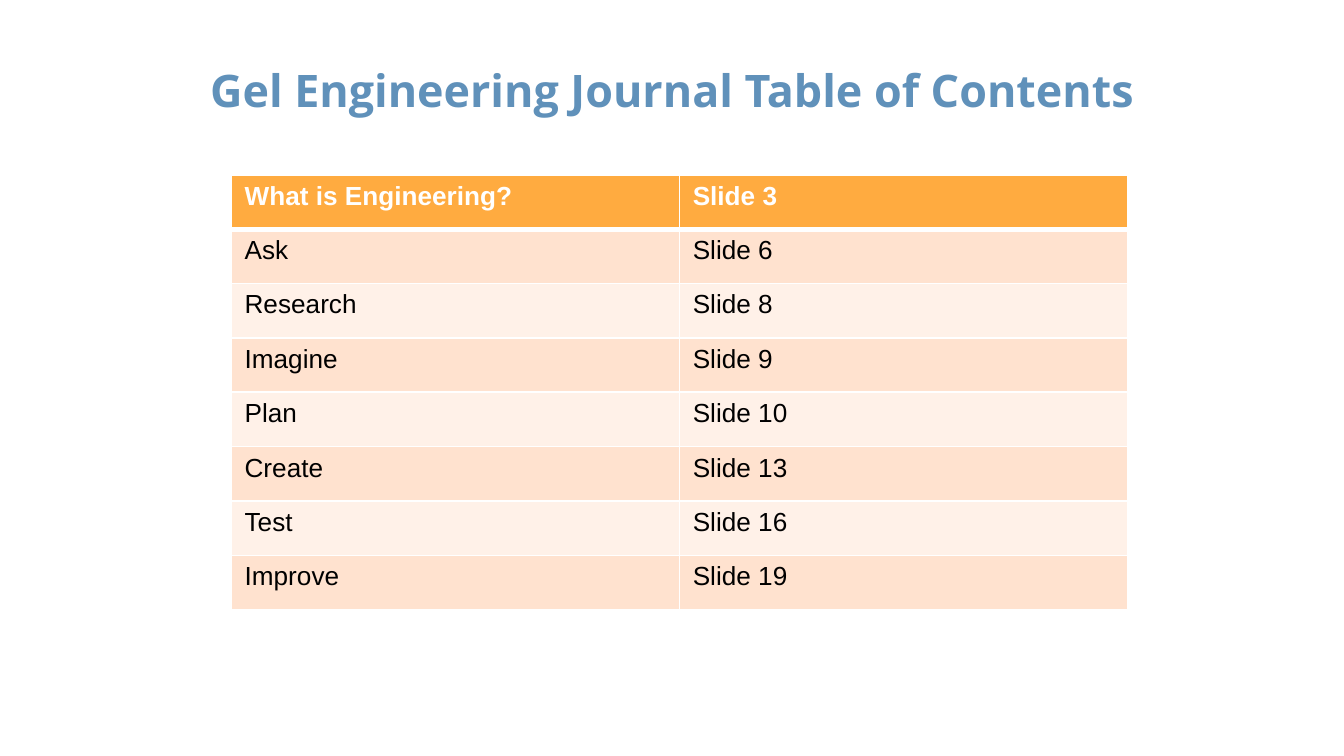
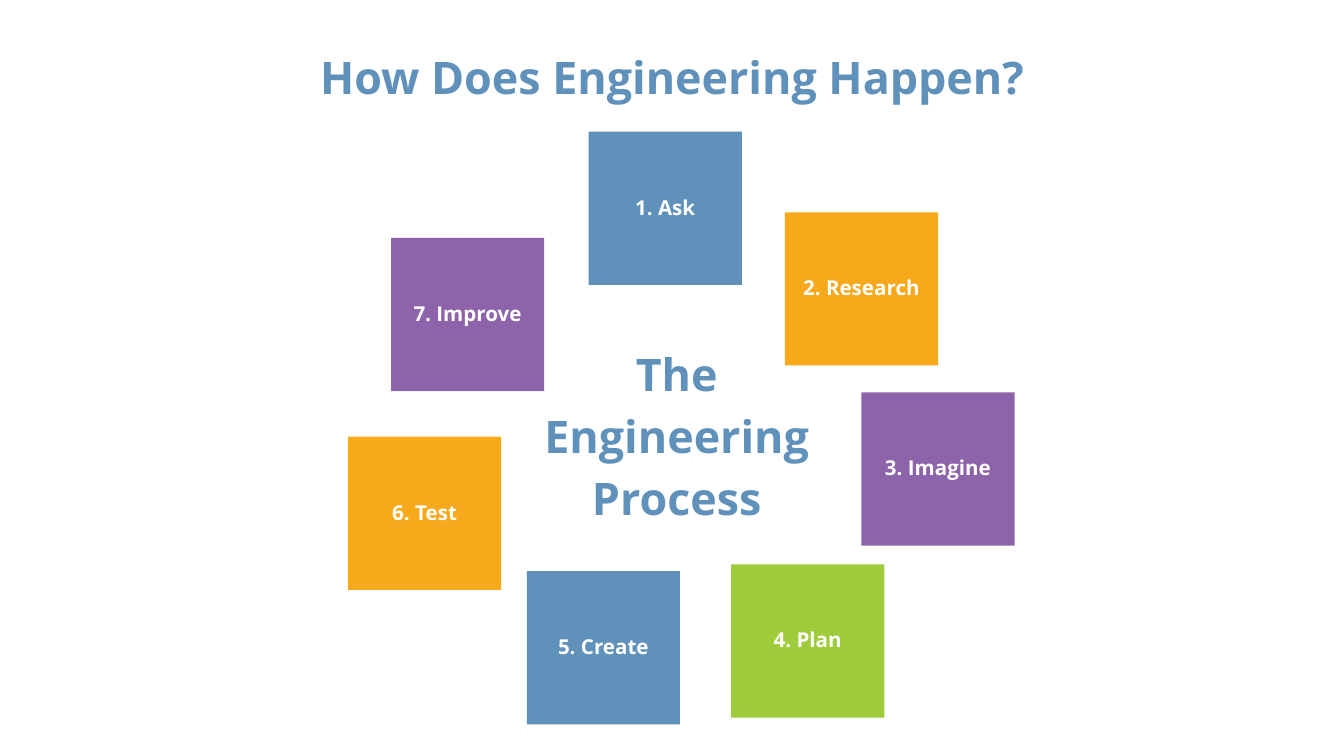
import pptx
import pptx.dml.color
import pptx.enum.shapes
import pptx.enum.text
import pptx.oxml
import pptx.oxml.ns
import pptx.util

Inches = pptx.util.Inches
Pt = pptx.util.Pt
RGBColor = pptx.dml.color.RGBColor

# Shared colours and fonts
BLUE = RGBColor(0x60, 0x91, 0xBA)
ORANGE = RGBColor(0xF8, 0xA8, 0x1B)
PURPLE = RGBColor(0x8D, 0x64, 0xAA)
GREEN = RGBColor(0x9F, 0xCC, 0x3B)
WHITE = RGBColor(0xFF, 0xFF, 0xFF)
BLACK = RGBColor(0x00, 0x00, 0x00)
HEADER_FILL = RGBColor(0xFF, 0xAB, 0x40)
BAND_FILLS = (RGBColor(0xFF, 0xF1, 0xE8), RGBColor(0xFF, 0xE2, 0xCF))
HEADING_FONT = "Open Sans"
TABLE_FONT = "Arial"

CONTENTS = [
    ("What is Engineering?", "Slide 3"),
    ("Ask", "Slide 6"),
    ("Research", "Slide 8"),
    ("Imagine", "Slide 9"),
    ("Plan", "Slide 10"),
    ("Create", "Slide 13"),
    ("Test", "Slide 16"),
    ("Improve", "Slide 19"),
]

# Step name, left, top, colour
STEPS = [
    ("Ask", 4.38, 0.98, BLUE),
    ("Research", 5.84, 1.58, ORANGE),
    ("Imagine", 6.41, 2.92, PURPLE),
    ("Plan", 5.44, 4.2, GREEN),
    ("Create", 3.92, 4.25, BLUE),
    ("Test", 2.59, 3.25, ORANGE),
    ("Improve", 2.91, 1.77, PURPLE),
]
STEP_SIZE = 1.14
LABEL_DROP = 0.34
LABEL_HEIGHT = 0.39


def add_run(p, text, font, size, color, bold):
    r = p.add_run()
    r.text = text
    r.font.name = font
    r.font.size = Pt(size)
    r.font.color.rgb = color
    r.font.bold = bold


def write_heading(sp, text, size, color):
    """Centred bold text, starting at the top of its frame."""
    tf = sp.text_frame
    tf.word_wrap = True
    tf.auto_size = pptx.enum.text.MSO_AUTO_SIZE.NONE
    tf.vertical_anchor = pptx.enum.text.MSO_ANCHOR.TOP
    tf.margin_left = tf.margin_right = Inches(0.1)
    tf.margin_top = tf.margin_bottom = Inches(0.1)
    p = tf.paragraphs[0]
    p.alignment = pptx.enum.text.PP_ALIGN.CENTER
    p.line_spacing = 1.15
    add_run(p, text, HEADING_FONT, size, color, True)


def add_titled_slide(prs, title, top, height):
    s = prs.slides.add_slide(prs.slide_layouts[5])
    sp = s.shapes.title
    sp.left, sp.top = Inches(0.34), Inches(top)
    sp.width, sp.height = Inches(9.32), Inches(height)
    write_heading(sp, title, 24, BLUE)
    return s


def add_label(s, text, left, top, width, height, size, color):
    sp = s.shapes.add_textbox(Inches(left), Inches(top), Inches(width), Inches(height))
    write_heading(sp, text, size, color)


def add_square(s, left, top, color):
    sp = s.shapes.add_shape(pptx.enum.shapes.MSO_SHAPE.RECTANGLE, Inches(left),
                            Inches(top), Inches(STEP_SIZE), Inches(STEP_SIZE))
    sp.shadow.inherit = False
    sp.fill.solid()
    sp.fill.fore_color.rgb = color
    sp.line.fill.background()


def set_borders(cell, top, bottom):
    """White borders, 1 pt at the sides; they precede the fill in the cell."""
    tc_pr = cell._tc.get_or_add_tcPr()
    widths = (("lnL", 1), ("lnR", 1), ("lnT", top), ("lnB", bottom))
    for i, (side, width) in enumerate(widths):
        tc_pr.insert(i, pptx.oxml.parse_xml(
            f'<a:{side} {pptx.oxml.ns.nsdecls("a")} w="{Pt(width)}">'
            f'<a:solidFill><a:srgbClr val="{WHITE}"/></a:solidFill></a:{side}>'))


def add_contents_table(s, rows):
    table = s.shapes.add_table(len(rows), 2, Inches(1.72), Inches(1.3),
                               Inches(6.67), Inches(3.24)).table
    for i, row in enumerate(rows):
        header = i == 0
        for j, text in enumerate(row):
            cell = table.cell(i, j)
            cell.fill.solid()
            cell.fill.fore_color.rgb = HEADER_FILL if header else BAND_FILLS[i % 2]
            set_borders(cell, top=3 if i == 1 else 1, bottom=3 if header else 1)
            add_run(cell.text_frame.paragraphs[0], text, TABLE_FONT, 14,
                    WHITE if header else BLACK, header)


def main():
    # Widescreen, 16:9
    prs = pptx.Presentation()
    prs.slide_width = Inches(10)
    prs.slide_height = prs.slide_width * 9 // 16

    # Table of contents
    s = add_titled_slide(prs, "Gel Engineering Journal Table of Contents", 0.31, 4.35)
    add_contents_table(s, CONTENTS)

    # Ring of process steps around the centre text
    s = add_titled_slide(prs, "How Does Engineering Happen?", 0.21, 0.56)
    for number, (name, left, top, color) in enumerate(STEPS, 1):
        add_square(s, left, top, color)
        add_label(s, f"{number}. {name}", left, top + LABEL_DROP,
                  STEP_SIZE, LABEL_HEIGHT, 11, WHITE)
    add_label(s, "The Engineering Process", 3.8, 2.42, 2.47, 1.61, 24, BLUE)

    prs.save("out.pptx")


if __name__ == "__main__":
    main()
